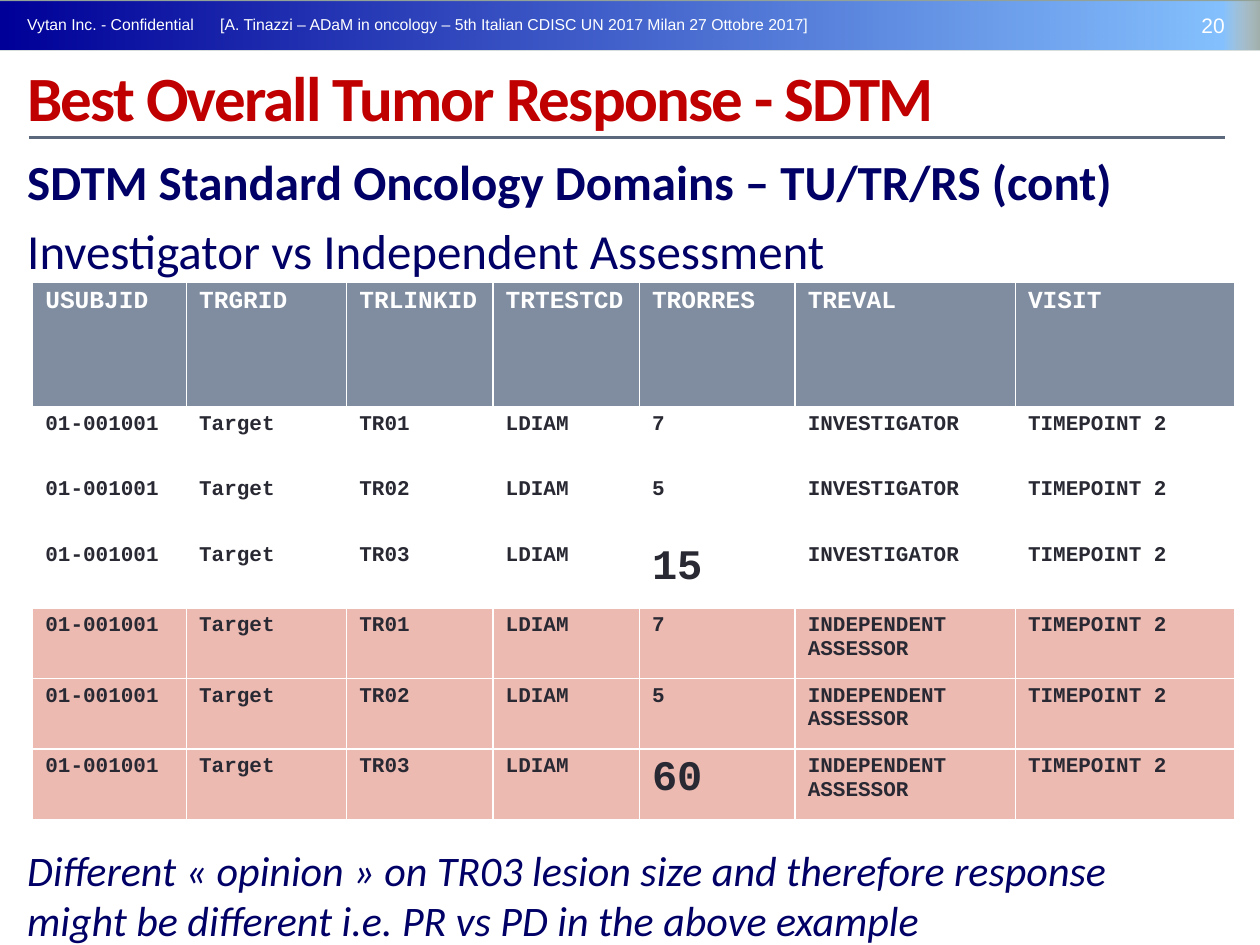
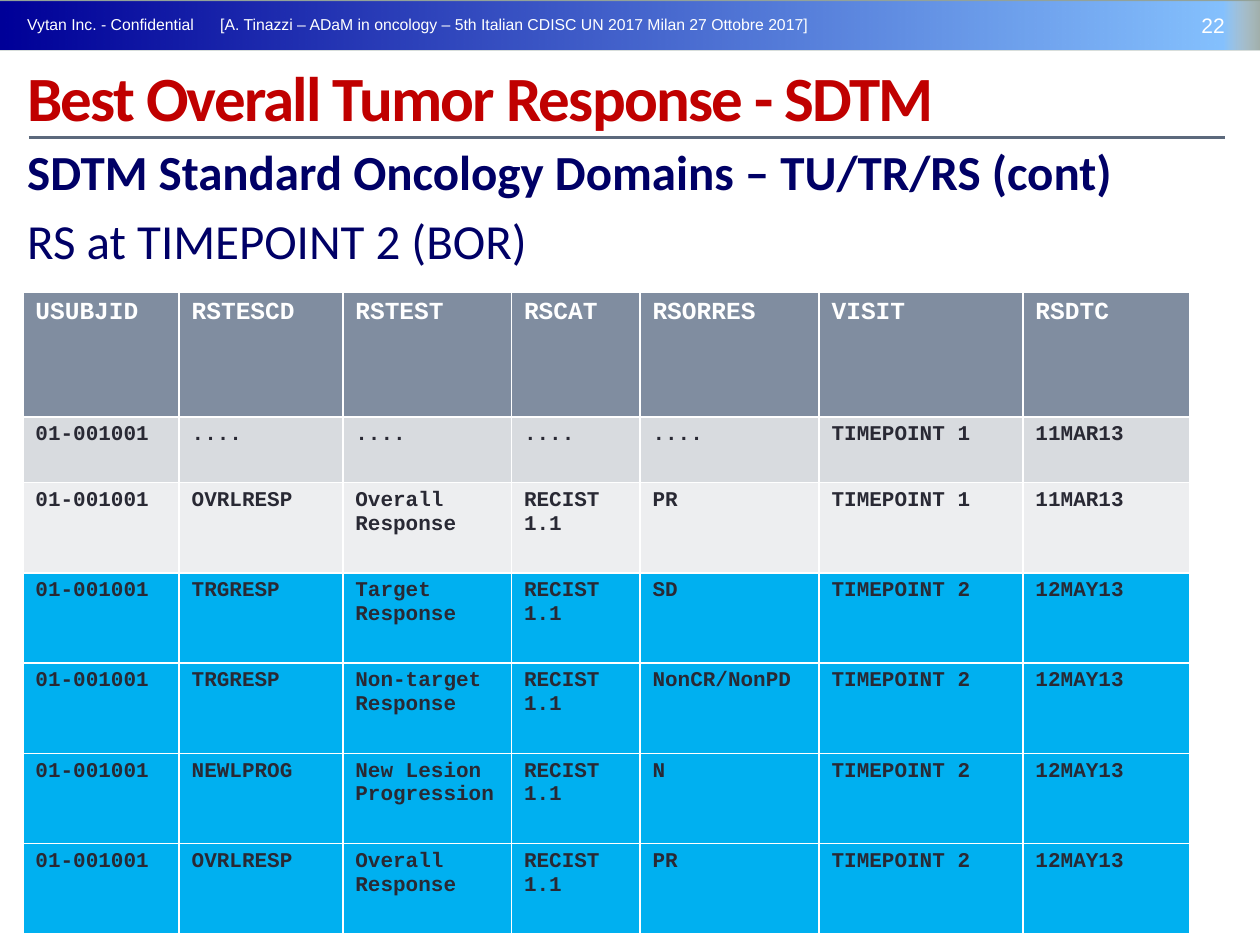
import pptx
import pptx.dml.color
import pptx.enum.shapes
import pptx.enum.text
import pptx.oxml
import pptx.oxml.ns
import pptx.util
from lxml import etree

Cm = pptx.util.Cm
Pt = pptx.util.Pt
RGBColor = pptx.dml.color.RGBColor
qn = pptx.oxml.ns.qn

WHITE = RGBColor(0xFF, 0xFF, 0xFF)
SAGE = RGBColor(0x93, 0xA2, 0x99)
RED = RGBColor(0xC0, 0x00, 0x00)
NAVY = RGBColor(0x00, 0x00, 0x66)
RULE = RGBColor(0x5C, 0x69, 0x7C)
INK = RGBColor(0x29, 0x29, 0x34)
SLATE = RGBColor(0x80, 0x8D, 0xA0)
PINK = RGBColor(0xED, 0xBA, 0xB1)
GREY = RGBColor(0xD8, 0xDB, 0xDF)
PALE = RGBColor(0xED, 0xEE, 0xF0)
BLUE = RGBColor(0x00, 0xB0, 0xF0)

BAND_STOPS = [(0, "000099", 100), (97, "85C2FF", 100), (100, "D7E3F1", 18), (100, "FFEBFA", 100)]
TITLE = "Best Overall Tumor Response - SDTM"
HEADING = "SDTM Standard Oncology Domains – TU/TR/RS (cont)"
COMPANY = "Vytan Inc. - Confidential"
EVENT = "[A. Tinazzi – ADaM in oncology – 5th Italian CDISC UN 2017 Milan 27 Ottobre 2017]"
SUBJECT = "01-001001"

lesions = [("TR01", "7"), ("TR02", "5")]
assessments = [
    (SUBJECT, "Target", link, "LDIAM", size, evaluator, "TIMEPOINT 2")
    for evaluator, last_size in [("INVESTIGATOR", "15"), ("INDEPENDENT ASSESSOR", "60")]
    for link, size in lesions + [("TR03", last_size)]
]
responses = [
    (SUBJECT, "....", "....", "....", "....", "TIMEPOINT 1", "11MAR13"),
    (SUBJECT, "OVRLRESP", "Overall Response", "RECIST 1.1", "PR", "TIMEPOINT 1", "11MAR13"),
] + [
    (SUBJECT, code, test, "RECIST 1.1", result, "TIMEPOINT 2", "12MAY13")
    for code, test, result in [
        ("TRGRESP", "Target Response", "SD"),
        ("TRGRESP", "Non-target Response", "NonCR/NonPD"),
        ("NEWLPROG", "New Lesion Progression", "N"),
        ("OVRLRESP", "Overall Response", "PR"),
    ]
]

pages = [
    {
        "number": "20",
        "body_top": 2.93,
        "topic": "Investigator vs Independent Assessment",
        "note": "Different « opinion » on TR03 lesion size and therefore response "
                "might be different i.e. PR vs PD in the above example",
        "origin": (0.66, 5.69),
        "widths": [3.1, 3.23, 2.95, 2.95, 3.14, 4.44, 4.43],
        "heights": [2.51, 1.32, 1.32] + [1.42] * 4,
        "header": ("USUBJID", "TRGRID", "TRLINKID", "TRTESTCD", "TRORRES", "TREVAL", "VISIT"),
        "rows": assessments,
        "fills": [None] * 3 + [PINK] * 3,
    },
    {
        "number": "22",
        "body_top": 2.72,
        "topic": "RS at TIMEPOINT 2 (BOR)",
        "note": None,
        "origin": (0.46, 5.9),
        "widths": [3.15, 3.3, 3.4, 2.59, 3.61, 4.11, 3.36],
        "heights": [2.51, 1.32] + [1.82] * 5,
        "header": ("USUBJID", "RSTESCD", "RSTEST", "RSCAT", "RSORRES", "VISIT", "RSDTC"),
        "rows": responses,
        "fills": [GREY, PALE] + [BLUE] * 4,
    },
]


def add_run(paragraph, text, font_name, size, color, bold=False, italic=False):
    run = paragraph.add_run()
    run.text = text
    run.font.name = font_name
    run.font.size = Pt(size)
    run.font.color.rgb = color
    run.font.bold = bold
    run.font.italic = italic
    return run


def add_text_frame(slide, left, top, width, height):
    box = slide.shapes.add_textbox(Cm(left), Cm(top), Cm(width), Cm(height))
    box.text_frame.word_wrap = True
    return box.text_frame


presentation = pptx.Presentation()
presentation.slide_width = Cm(25.4)
presentation.slide_height = Cm(19.05)

for page in pages:
    slide = presentation.slides.add_slide(presentation.slide_layouts[6])

    for top, height in [(0, 1.02), (0.03, 0.97)]:
        band = slide.shapes.add_shape(
            pptx.enum.shapes.MSO_SHAPE.RECTANGLE, Cm(0), Cm(top), Cm(25.4), Cm(height))
        band.shadow.inherit = False
        band.line.fill.background()
        band.fill.solid()
        band.fill.fore_color.rgb = SAGE
    band.fill.gradient()
    band.fill.gradient_angle = 0
    stop_list = band._element.spPr.find(qn("a:gradFill")).find(qn("a:gsLst"))
    for stop in list(stop_list):
        stop_list.remove(stop)
    for position, color, opacity in BAND_STOPS:
        stop = etree.SubElement(stop_list, qn("a:gs"), pos=str(position * 1000))
        stop_color = etree.SubElement(stop, qn("a:srgbClr"), val=color)
        if opacity < 100:
            etree.SubElement(stop_color, qn("a:alpha"), val=str(opacity * 1000))

    for left, top, width, text, size in [
        (0.3, 0.18, 4.1, COMPANY, 9),
        (23.19, 0.13, 1.75, page["number"], 12),
        (4.19, 0.18, 12.8, EVENT, 9),
    ]:
        paragraph = add_text_frame(slide, left, top, width, 0.64).paragraphs[0]
        add_run(paragraph, text, "Arial", size, WHITE)
        if text == page["number"]:
            paragraph.alignment = pptx.enum.text.PP_ALIGN.RIGHT

    body = add_text_frame(slide, 0.3, page["body_top"], 23.7, 2.16)
    heading = body.paragraphs[0]
    add_run(heading, HEADING, "Calibri", 28, NAVY, bold=True)
    heading.space_after = Pt(3)
    topic = body.add_paragraph()
    topic.space_before = Pt(3)
    add_run(topic, page["topic"], "Calibri", 28, NAVY)

    if page["note"]:
        note = add_text_frame(slide, 0.3, 16.9, 23.7, 2.1).paragraphs[0]
        add_run(note, page["note"], "Calibri", 24, NAVY, italic=True)

    rule = slide.shapes.add_connector(
        pptx.enum.shapes.MSO_CONNECTOR.STRAIGHT, Cm(0.58), Cm(2.77), Cm(24.69), Cm(2.77))
    rule.line.color.rgb = RULE
    rule.line.width = Pt(1.5)
    etree.SubElement(rule._element.spPr, qn("a:effectLst"))

    title = add_text_frame(slide, 0.3, 1.06, 23.8, 1.8).paragraphs[0]
    title_run = add_run(title, TITLE, "Calibri", 36, RED, bold=True)
    title_run.font._element.set("spc", "-100")

    left, top = page["origin"]
    widths, heights = page["widths"], page["heights"]
    table = slide.shapes.add_table(
        len(heights), len(widths), Cm(left), Cm(top), Cm(sum(widths)), Cm(sum(heights))).table
    table.horz_banding = False
    for column, width in zip(table.columns, widths):
        column.width = Cm(width)
    for row, height in zip(table.rows, heights):
        row.height = Cm(height)

    for row_index, values in enumerate([page["header"]] + page["rows"]):
        is_header = row_index == 0
        fill = SLATE if is_header else page["fills"][row_index - 1]
        for column_index, value in enumerate(values):
            cell = table.cell(row_index, column_index)
            properties = cell._tc.get_or_add_tcPr()
            for side in ("lnL", "lnR", "lnT", "lnB"):
                border = etree.SubElement(properties, qn("a:" + side), w=str(Pt(1)))
                border_fill = etree.SubElement(border, qn("a:solidFill"))
                etree.SubElement(border_fill, qn("a:srgbClr"), val=str(WHITE))
            if fill is None:
                cell.fill.background()
            else:
                cell.fill.solid()
                cell.fill.fore_color.rgb = fill
            size = 14 if is_header else 24 if value in ("15", "60") else 12
            add_run(cell.text_frame.paragraphs[0], value, "Courier New", size,
                    WHITE if is_header else INK, bold=True)

presentation.save("out.pptx")
